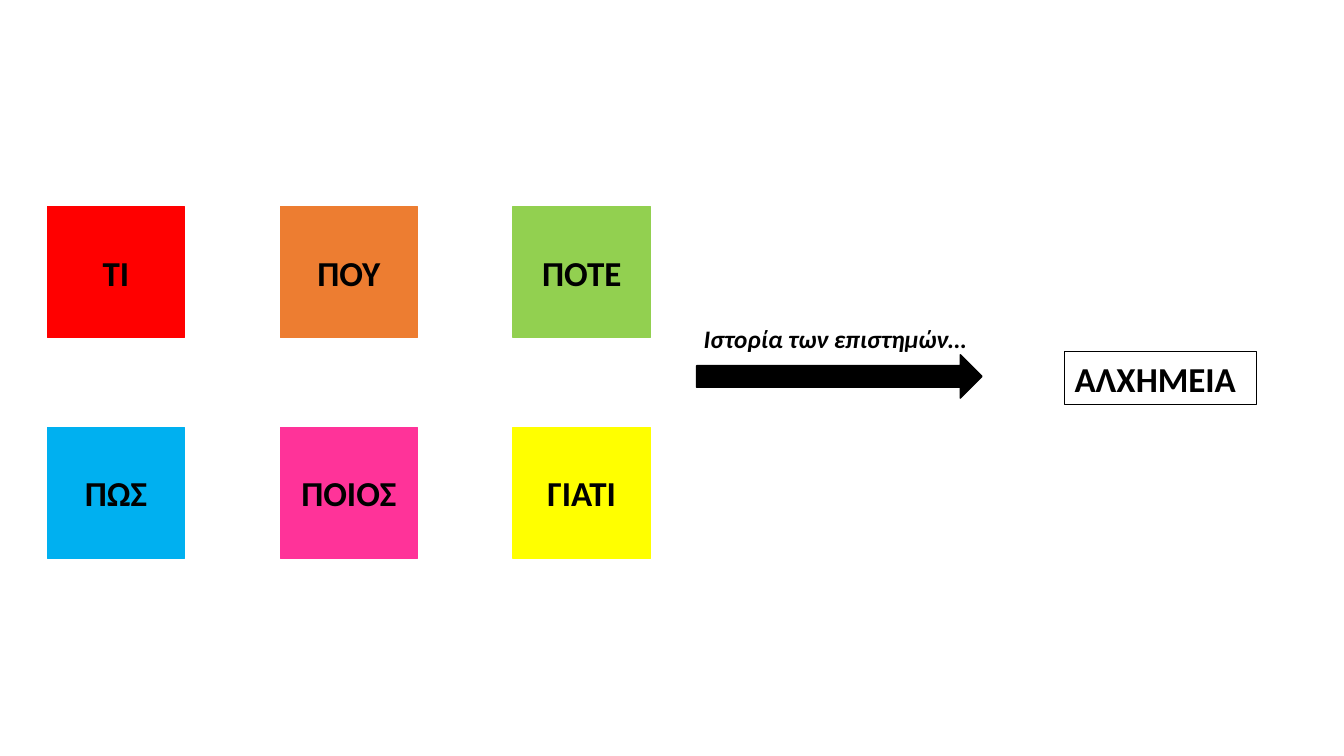
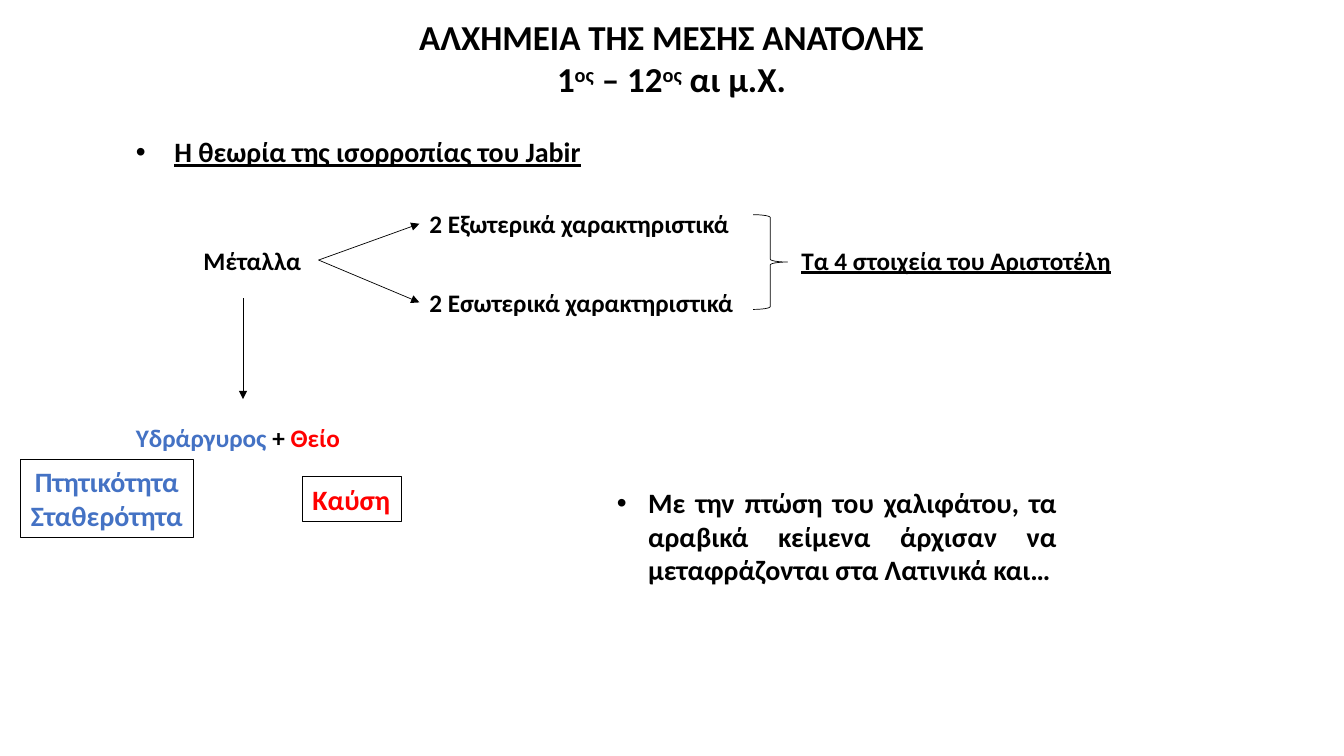
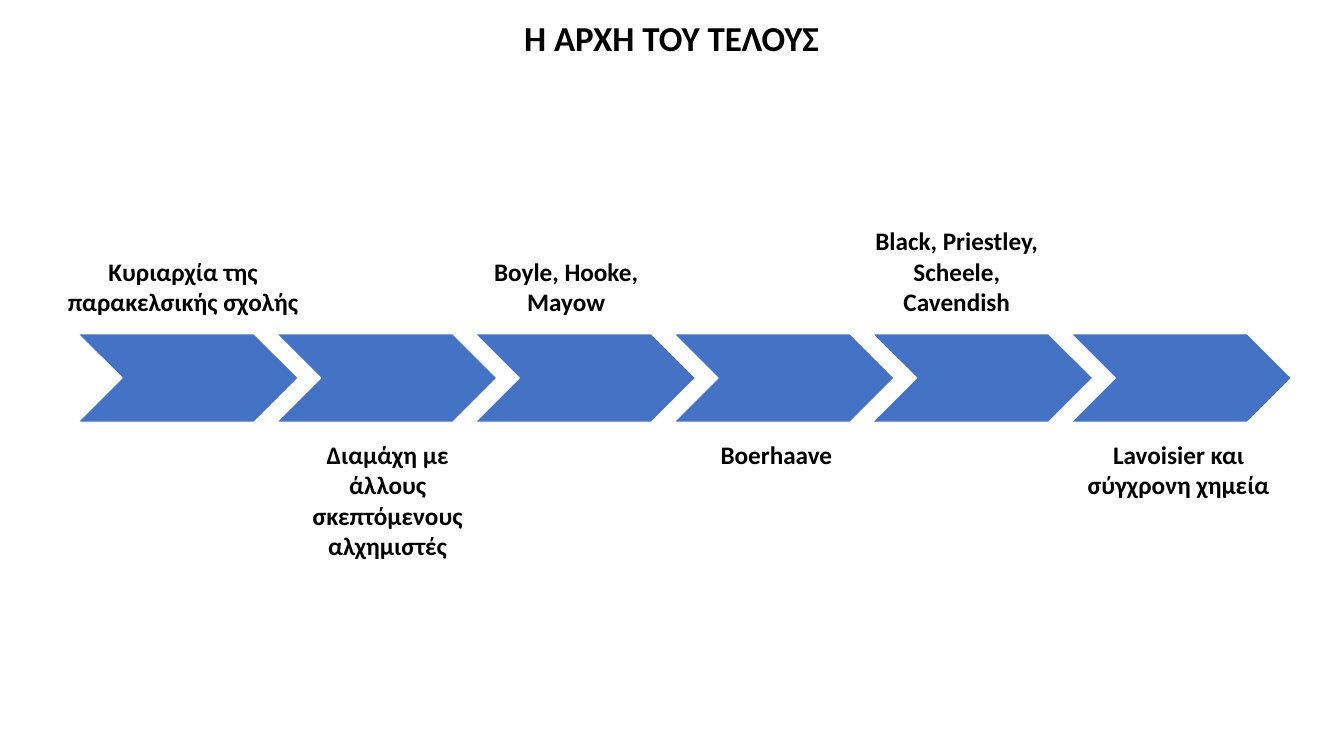
from lxml.etree import SubElement
from pptx import Presentation
from pptx.dml.color import RGBColor
from pptx.enum.shapes import MSO_CONNECTOR, MSO_SHAPE
from pptx.enum.text import MSO_ANCHOR, MSO_AUTO_SIZE, PP_ALIGN
from pptx.oxml.ns import qn
from pptx.util import Pt

PX = 9144  # EMU per px, 100 px to the inch
WIDTH, HEIGHT = 1333, 750
BLACK, WHITE, RED, BLUE = "000000", "FFFFFF", "FF0000", "4472C4"
LEFT, CENTER, JUSTIFY = PP_ALIGN.LEFT, PP_ALIGN.CENTER, PP_ALIGN.JUSTIFY
TOP, RIGHT_SIDE, LEFT_SIDE = 0, 3, 1


def rgb(color):
    return RGBColor.from_string(color)


def write(frame, *paragraphs, size=18, color=BLACK, italic=False,
          underline=False, align=LEFT, bullet=0, wrap=True):
    """Each paragraph is a string or a list of (text, color, raised) runs."""
    frame.word_wrap = wrap
    frame.auto_size = MSO_AUTO_SIZE.SHAPE_TO_FIT_TEXT
    for index, content in enumerate(paragraphs):
        paragraph = frame.add_paragraph() if index else frame.paragraphs[0]
        paragraph.alignment = align
        if bullet:
            properties = paragraph._p.get_or_add_pPr()
            properties.set("marL", str(bullet * PX))
            properties.set("indent", str(-bullet * PX))
            SubElement(properties, qn("a:buFont"), typeface="Arial")
            SubElement(properties, qn("a:buChar"), char="•")
        runs = [(content, color, False)] if isinstance(content, str) else content
        for text, run_color, raised in runs:
            run = paragraph.add_run()
            run.text = text
            font = run.font
            font.name, font.size, font.bold = "Calibri", Pt(size), True
            font.italic, font.underline = italic, underline
            font.color.rgb = rgb(run_color)
            if raised:
                run._r.get_or_add_rPr().set("baseline", "30000")


class Deck:
    def __init__(self):
        self.prs = Presentation()
        self.prs.slide_width, self.prs.slide_height = WIDTH * PX, HEIGHT * PX
        self.slide = None

    def new_slide(self):
        self.slide = self.prs.slides.add_slide(self.prs.slide_layouts[6])

    def text(self, x, y, w, h, *paragraphs, **style):
        box = self.slide.shapes.add_textbox(x * PX, y * PX, w * PX, h * PX)
        write(box.text_frame, *paragraphs, **style)
        return box

    def title(self, width, height, *paragraphs):
        self.text((WIDTH - width) // 2, 11, width, height, *paragraphs,
                  size=25, align=CENTER, wrap=False)

    def shape(self, kind, x, y, w, h, fill=None, line=BLACK, weight=1):
        shape = self.slide.shapes.add_shape(kind, x * PX, y * PX, w * PX, h * PX)
        shape.shadow.inherit = False
        if fill:
            shape.fill.solid()
            shape.fill.fore_color.rgb = rgb(fill)
        else:
            shape.fill.background()
        shape.line.color.rgb = rgb(line)
        shape.line.width = Pt(weight)
        return shape

    def framed_text(self, x, y, w, h, *paragraphs, **style):
        frame = self.shape(MSO_SHAPE.RECTANGLE, x, y, w, h, weight=0.75)
        write(frame.text_frame, *paragraphs, **style)

    def arrow(self, start, end):
        """Each end is an (x, y) point or a (shape, side) joint."""
        line = self.slide.shapes.add_connector(MSO_CONNECTOR.STRAIGHT, 0, 0, 0, 0)
        if isinstance(start[0], int):
            line.begin_x, line.begin_y = start[0] * PX, start[1] * PX
        else:
            line.begin_connect(*start)
        if isinstance(end[0], int):
            line.end_x, line.end_y = end[0] * PX, end[1] * PX
        else:
            line.end_connect(*end)
        line.line.color.rgb = rgb(BLACK)
        line.line.width = Pt(0.5)
        properties = line._element.spPr
        SubElement(properties.find(qn("a:ln")), qn("a:tailEnd"), type="triangle")
        SubElement(properties, qn("a:effectLst"))


def questions(deck):
    deck.new_slide()

    # Grid of question squares
    rows = [
        [("ΤΙ", RED), ("ΠΟΥ", "ED7D31"), ("ΠΟΤΕ", "92D050")],
        [("ΠΩΣ", "00B0F0"), ("ΠΟΙΟΣ", "FF3399"), ("ΓΙΑΤΙ", "FFFF00")],
    ]
    for row, squares in enumerate(rows):
        for column, (question, color) in enumerate(squares):
            square = deck.shape(MSO_SHAPE.RECTANGLE, 47 + 231 * column,
                                205 + 219 * row, 136, 130, color, color)
            frame = square.text_frame
            write(frame, question, size=25, align=CENTER)
            frame.auto_size = MSO_AUTO_SIZE.NONE
            frame.vertical_anchor = MSO_ANCHOR.MIDDLE

    # Arrow to the answer
    deck.shape(MSO_SHAPE.RIGHT_ARROW, 691, 352, 283, 43, BLACK)
    deck.text(688, 316, 283, 40, "Ιστορία των επιστημών…", italic=True, wrap=False)
    deck.framed_text(1056, 349, 190, 52, "ΑΛΧΗΜΕΙΑ", size=25)


def middle_east(deck):
    deck.new_slide()
    deck.title(526, 94, "ΑΛΧΗΜΕΙΑ ΤΗΣ ΜΕΣΗΣ ΑΝΑΤΟΛΗΣ", [
        ("1", BLACK, False), ("ος", BLACK, True), (" – 12", BLACK, False),
        ("ος", BLACK, True), (" αι μ.Χ.", BLACK, False)])
    deck.text(125, 129, 478, 44, "Η θεωρία της ισορροπίας του Jabir",
              size=20, underline=True, bullet=38)

    # Metals and their characteristics
    metals = deck.text(192, 238, 124, 40, "Μέταλλα")
    outer = deck.text(416, 202, 326, 40, "2 Εξωτερικά χαρακτηριστικά")
    inner = deck.text(416, 280, 330, 40, "2 Εσωτερικά χαρακτηριστικά")
    for characteristics in (outer, inner):
        deck.arrow((metals, RIGHT_SIDE), (characteristics, LEFT_SIDE))
    deck.shape(MSO_SHAPE.RIGHT_BRACE, 747, 213, 34, 94, weight=0.5)
    deck.text(785, 238, 330, 40, "Τα 4 στοιχεία του Αριστοτέλη",
              underline=True, wrap=False)

    # Mercury and sulphur
    deck.arrow((241, 296), (241, 396))
    deck.text(125, 414, 224, 40, [("Υδράργυρος", BLUE, False),
              (" + ", BLACK, False), ("Θείο", RED, False)], wrap=False)
    deck.framed_text(300, 473, 98, 44, "Καύση", size=20, color=RED, wrap=False)
    deck.framed_text(20, 456, 172, 77, "Πτητικότητα", "Σταθερότητα",
                     size=20, color=BLUE, align=CENTER, wrap=False)

    # What followed
    deck.text(602, 477, 456, 113,
              "Με την πτώση του χαλιφάτου, τα αραβικά κείμενα άρχισαν να "
              "μεταφράζονται στα Λατινικά και…",
              size=20, align=JUSTIFY, bullet=31)


def beginning_of_the_end(deck):
    deck.new_slide()
    deck.title(316, 52, "Η ΑΡΧΗ ΤΟΥ ΤΕΛΟΥΣ")

    # Timeline: label left, width, line count and text, above and below in turn
    stages = [
        (52, 259, 2, "Κυριαρχία της παρακελσικής σχολής"),
        (283, 203, 4, "Διαμάχη με άλλους σκεπτόμενους αλχημιστές"),
        (469, 185, 2, "Boyle, Hooke, Mayow"),
        (704, 132, 1, "Boerhaave"),
        (851, 196, 3, "Black, Priestley, Scheele, Cavendish"),
        (1051, 236, 2, "Lavoisier και σύγχρονη χημεία"),
    ]
    for index, (left, width, lines, label) in enumerate(stages):
        deck.shape(MSO_SHAPE.CHEVRON, 77 + 197 * index, 331, 219, 88, BLUE, WHITE)
        height = 10 + 30 * lines
        top = 431 if index % 2 else 319 - height
        deck.text(left, top, width, height, label, align=CENTER)


def main():
    deck = Deck()
    questions(deck)
    middle_east(deck)
    beginning_of_the_end(deck)
    deck.prs.save("out.pptx")


if __name__ == "__main__":
    main()
